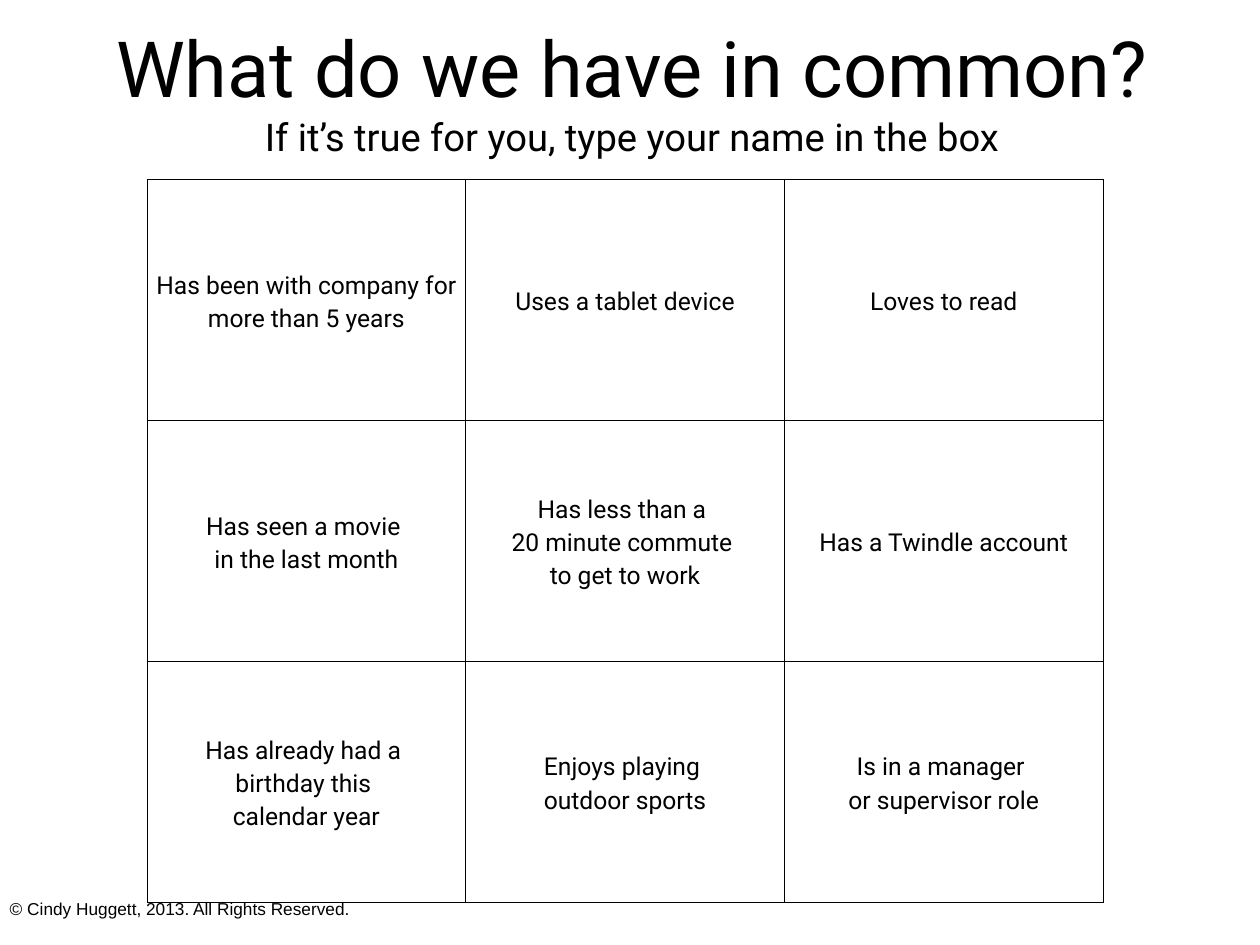
from dataclasses import dataclass

from lxml.etree import SubElement
from pptx import Presentation
from pptx.dml.color import RGBColor
from pptx.enum.text import MSO_ANCHOR, MSO_AUTO_SIZE, PP_ALIGN
from pptx.oxml.ns import qn
from pptx.util import Inches, Pt

TITLE_LINES = [
    "What do we have in common?",
    "If it’s true for you, type your name in the box",
]
BINGO_ROWS = [
    [
        ["Has been with company for more than 5 years"],
        ["Uses a tablet device"],
        ["Loves to read"],
    ],
    [
        ["Has seen a movie ", "in the last month"],
        ["Has less than a ", "20 minute commute ", "to get to work"],
        ["Has a Twindle account"],
    ],
    [
        ["Has already had a ", "birthday this ", "calendar year"],
        ["Enjoys playing ", "outdoor sports"],
        ["Is in a manager ", "or supervisor role"],
    ],
]
COPYRIGHT = "© Cindy Huggett, 2013. All Rights Reserved."


@dataclass(frozen=True)
class Theme:
    ink: str = "000000"
    font: str = "Roboto"
    footer_font: str = "Arial"
    title_size: int = 63
    subtitle_size: int = 31
    cell_size: int = 20
    footer_size: int = 14
    border_width: int = 1
    cell_spacing: float = 1.15


THEME = Theme()


def add_lines(paragraph, lines, sizes, font_name):
    paragraph.alignment = PP_ALIGN.CENTER
    for index, (line, size) in enumerate(zip(lines, sizes)):
        if index:
            paragraph.add_line_break()
        run = paragraph.add_run()
        run.text = line
        run.font.name = font_name
        run.font.size = Pt(size)
        run.font.bold = False
        run.font.color.rgb = RGBColor.from_string(THEME.ink)


def set_insets(text_frame):
    text_frame.margin_left = text_frame.margin_right = Inches(0.14)
    text_frame.margin_top = text_frame.margin_bottom = Inches(0.07)


def add_borders(cell):
    properties = cell._tc.get_or_add_tcPr()
    for side in ("a:lnL", "a:lnR", "a:lnT", "a:lnB"):
        line = SubElement(properties, qn(side), w=str(Pt(THEME.border_width)))
        fill = SubElement(line, qn("a:solidFill"))
        SubElement(fill, qn("a:srgbClr"), val=THEME.ink)


def add_title(slide):
    title = slide.shapes.title
    title.left, title.top = Inches(0.04), Inches(0.12)
    title.width, title.height = Inches(14.18), Inches(1.78)
    text_frame = title.text_frame
    set_insets(text_frame)
    text_frame.word_wrap = True
    text_frame.auto_size = MSO_AUTO_SIZE.NONE
    text_frame.vertical_anchor = MSO_ANCHOR.MIDDLE
    sizes = [THEME.title_size, THEME.subtitle_size]
    add_lines(text_frame.paragraphs[0], TITLE_LINES, sizes, THEME.font)


def add_bingo_table(slide):
    table = slide.shapes.add_table(
        len(BINGO_ROWS), len(BINGO_ROWS[0]),
        Inches(1.66), Inches(2.03), Inches(10.79), Inches(8.16),
    ).table
    table.first_row = False
    table.horz_banding = False
    for row_index, row in enumerate(BINGO_ROWS):
        for column_index, lines in enumerate(row):
            cell = table.cell(row_index, column_index)
            cell.margin_left = cell.margin_right = Inches(0.09)
            cell.margin_top = cell.margin_bottom = 0
            cell.vertical_anchor = MSO_ANCHOR.MIDDLE
            add_borders(cell)
            cell.fill.background()
            paragraph = cell.text_frame.paragraphs[0]
            paragraph.line_spacing = THEME.cell_spacing
            add_lines(paragraph, lines, [THEME.cell_size] * len(lines), THEME.font)


def add_footer(slide):
    footer = slide.shapes.add_textbox(
        Inches(-0.07), Inches(10.07), Inches(4.2), Inches(0.38)
    )
    text_frame = footer.text_frame
    set_insets(text_frame)
    text_frame.word_wrap = False
    text_frame.auto_size = MSO_AUTO_SIZE.SHAPE_TO_FIT_TEXT
    add_lines(
        text_frame.paragraphs[0], [COPYRIGHT], [THEME.footer_size], THEME.footer_font
    )


def main():
    presentation = Presentation()
    presentation.slide_width = Inches(14.22)
    presentation.slide_height = Inches(10.67)
    slide = presentation.slides.add_slide(presentation.slide_layouts[5])
    add_title(slide)
    add_bingo_table(slide)
    add_footer(slide)
    presentation.save("out.pptx")


if __name__ == "__main__":
    main()
